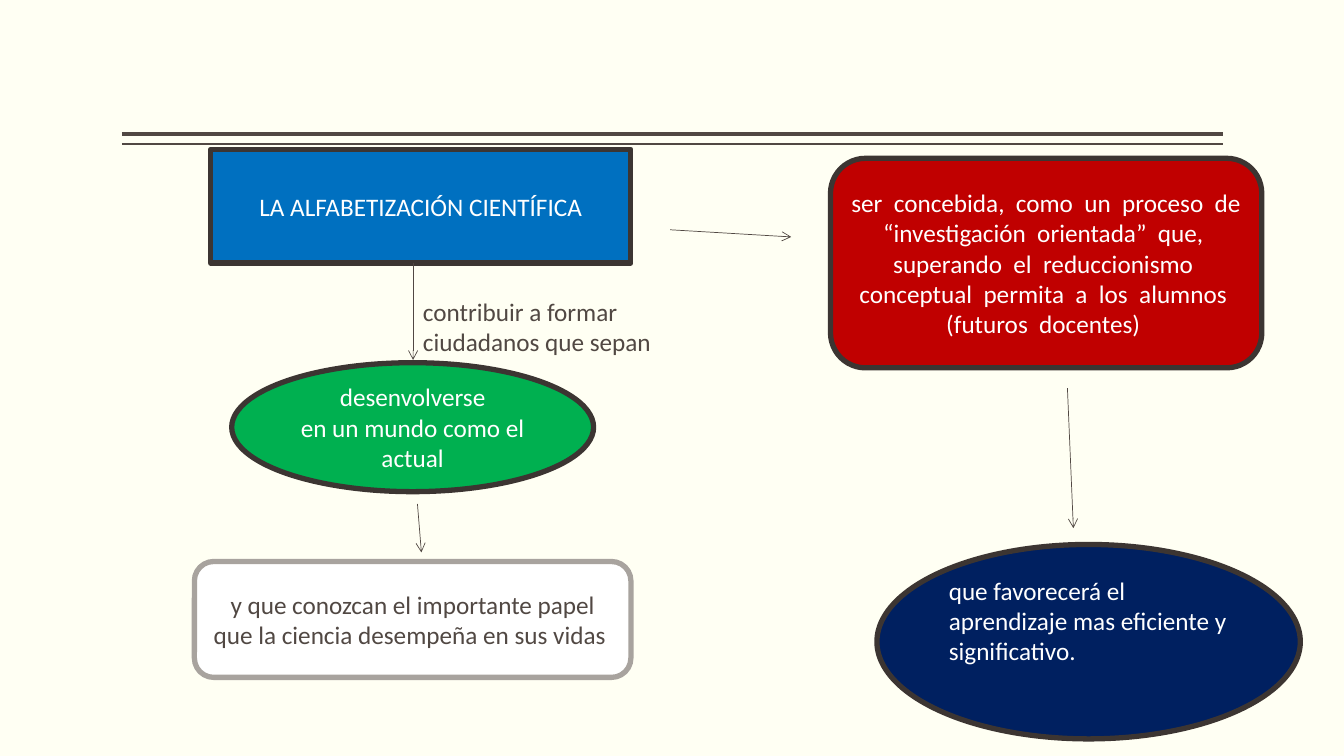
from dataclasses import dataclass

from lxml import etree
from pptx import Presentation
from pptx import util as u
from pptx.dml.color import RGBColor
from pptx.enum import shapes, text
from pptx.oxml.ns import qn

SHAPE = shapes.MSO_SHAPE
ALIGN = text.PP_ALIGN


@dataclass(frozen=True)
class Theme:
    """Colours, type and line widths of the concept map."""

    background: str = "FFFFF3"
    ink: str = "514843"
    border: str = "3C3532"
    soft_border: str = "A8A39E"
    white: str = "FFFFFF"
    blue: str = "0070C0"
    green: str = "00B050"
    red: str = "C00000"
    navy: str = "002060"
    font: str = "Calibri"
    size: float = 18
    border_width: float = 3.78
    arrow_width: float = 0.5


class ConceptMap:
    """Draws nodes, labels, rules and arrows on one slide."""

    def __init__(self, slide, theme):
        self.slide = slide
        self.theme = theme
        fill = slide.background.fill
        fill.solid()
        fill.fore_color.rgb = RGBColor.from_string(theme.background)

    def set_text(self, shape, lines, color, align):
        """Fill a shape with one paragraph per line."""
        frame = shape.text_frame
        frame.word_wrap = True
        frame.text = "\n".join(lines)
        for paragraph in frame.paragraphs:
            paragraph.alignment = align
            paragraph.font.name = self.theme.font
            paragraph.font.size = u.Pt(self.theme.size)
            paragraph.font.color.rgb = RGBColor.from_string(color)

    def node(self, kind, box, fill, lines, color=None, border=None,
             align=ALIGN.CENTER, bottom=0.13):
        """Add a bordered shape with vertically centred text."""
        shape = self.slide.shapes.add_shape(kind, *map(u.Cm, box))
        shape.shadow.inherit = False
        shape.fill.solid()
        shape.fill.fore_color.rgb = RGBColor.from_string(fill)
        shape.line.color.rgb = RGBColor.from_string(border or self.theme.border)
        shape.line.width = u.Pt(self.theme.border_width)
        shape.text_frame.vertical_anchor = text.MSO_ANCHOR.MIDDLE
        shape.text_frame.margin_bottom = u.Cm(bottom)
        self.set_text(shape, lines, color or self.theme.white, align)

    def label(self, box, lines):
        """Add plain left-aligned text."""
        shape = self.slide.shapes.add_textbox(*map(u.Cm, box))
        self.set_text(shape, lines, self.theme.ink, ALIGN.LEFT)

    def rule(self, ends, width):
        """Add a straight line and return it."""
        connector = self.slide.shapes.add_connector(
            shapes.MSO_CONNECTOR.STRAIGHT, *map(u.Cm, ends))
        connector.line.color.rgb = RGBColor.from_string(self.theme.ink)
        connector.line.width = u.Pt(width)
        etree.SubElement(connector._element.spPr, qn("a:effectLst"))
        return connector

    def arrow(self, ends):
        """Add a thin line with an open arrowhead at its end."""
        connector = self.rule(ends, self.theme.arrow_width)
        line = connector._element.spPr.find(qn("a:ln"))
        etree.SubElement(line, qn("a:tailEnd"), type="arrow")


def main():
    """Build the slide on scientific literacy."""
    presentation = Presentation()
    presentation.slide_width = u.Cm(33.87)
    presentation.slide_height = u.Cm(19.05)
    theme = Theme()
    slide = presentation.slides.add_slide(presentation.slide_layouts[6])
    concept_map = ConceptMap(slide, theme)

    for top, width in ((3.38, 3), (3.63, 1)):
        concept_map.rule((3.07, top, 30.81, top), width)

    concept_map.node(SHAPE.RECTANGLE, (5.31, 3.76, 10.59, 2.87), theme.blue,
                     ["LA ALFABETIZACIÓN CIENTÍFICA"])
    concept_map.node(SHAPE.OVAL, (5.84, 9.14, 9.12, 3.25), theme.green,
                     ["desenvolverse", "en un mundo como el actual"])
    concept_map.label((10.41, 7.34, 7.34, 1.8),
                      ["contribuir a formar", "ciudadanos que sepan"])
    concept_map.node(SHAPE.ROUNDED_RECTANGLE, (4.9, 14.15, 11, 2.92), theme.white,
                     ["y que conozcan el importante papel que la ciencia "
                      "desempeña en sus vidas "],
                     color=theme.ink, border=theme.soft_border)
    concept_map.node(SHAPE.ROUNDED_RECTANGLE, (20.93, 3.99, 10.87, 5.28), theme.red,
                     ["ser  concebida,  como  un  proceso  de “investigación  "
                      "orientada”  que,  superando  el  reduccionismo  conceptual  "
                      "permita  a  los  alumnos  (futuros  docentes) "])
    concept_map.node(SHAPE.OVAL, (22.1, 13.72, 10.67, 4.9), theme.navy,
                     ["que favorecerá el aprendizaje mas eficiente y significativo."],
                     align=ALIGN.LEFT, bottom=1.2)

    for ends in ((10.41, 6.63, 10.41, 9.07),
                 (10.52, 12.7, 10.62, 13.92),
                 (16.89, 5.79, 19.94, 5.97),
                 (26.9, 9.78, 27.05, 13.31)):
        concept_map.arrow(ends)

    presentation.save("out.pptx")


if __name__ == "__main__":
    main()
